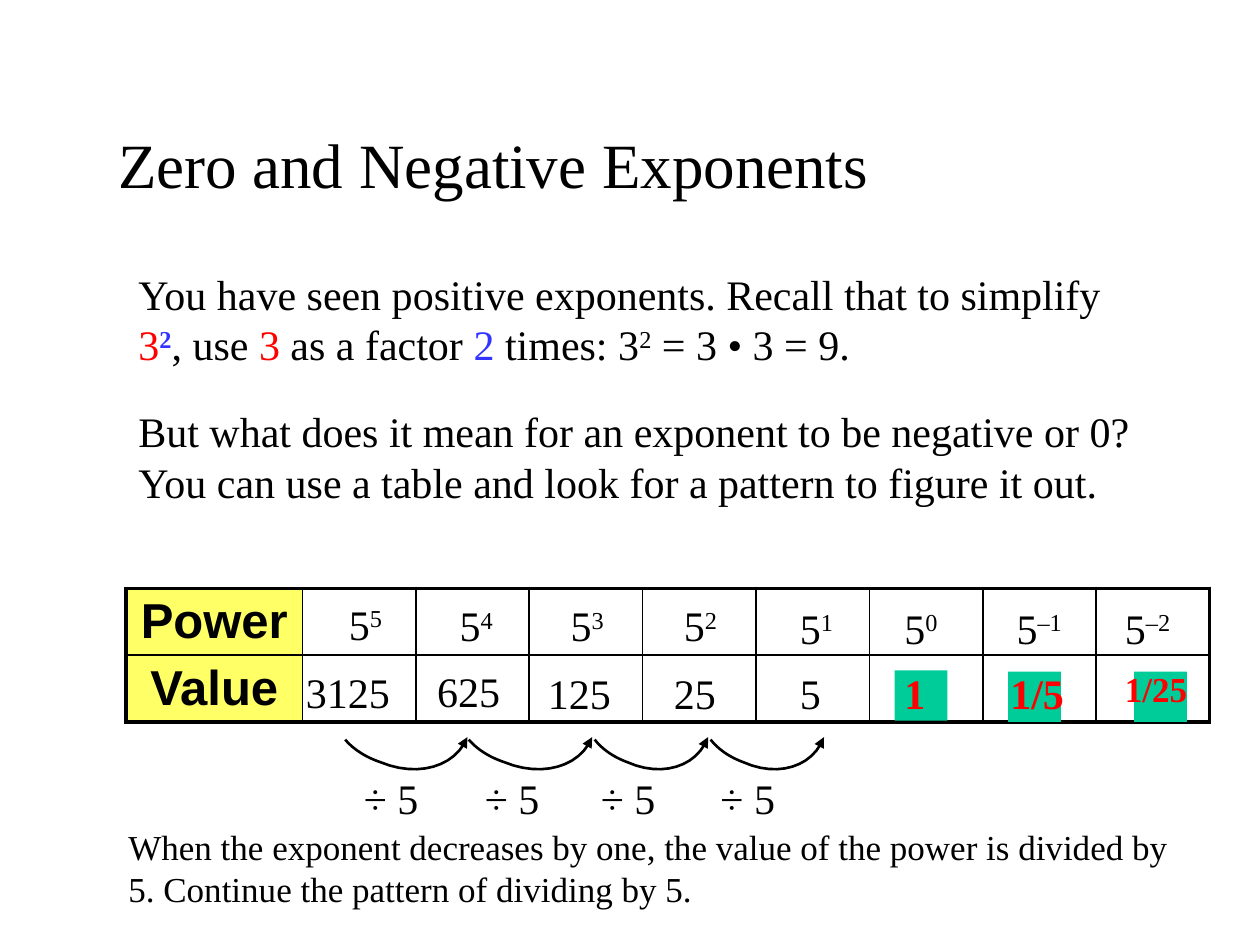
from lxml.etree import SubElement
from pptx import Presentation
from pptx.dml.color import RGBColor
from pptx.enum.shapes import MSO_SHAPE
from pptx.enum.text import MSO_ANCHOR, MSO_AUTO_SIZE, PP_ALIGN
from pptx.oxml.ns import qn
from pptx.util import Inches, Pt

BLACK, RED, BLUE = "000000", "FF0000", "3333FF"
YELLOW, GREEN = "FFFF66", "00CC99"
SERIF = "Times New Roman"


def color(value):
    """Turn a hex string into a colour."""
    return RGBColor.from_string(value)


def add_span(para, text, size=24, hue=BLACK, bold=False, raised=False, face=SERIF):
    """Add one formatted run to a paragraph."""
    span = para.add_run()
    span.text = text
    span.font.name = face
    span.font.size = Pt(size)
    span.font.bold = bold
    span.font.color.rgb = color(hue)
    if raised:
        span._r.get_or_add_rPr().set("baseline", "30000")


def add_text(shapes, left, top, width, height, spans, wrap=True):
    """Add a text box from (text, format) pairs."""
    box = shapes.add_textbox(Inches(left), Inches(top), Inches(width), Inches(height))
    frame = box.text_frame
    frame.word_wrap = wrap
    frame.auto_size = MSO_AUTO_SIZE.SHAPE_TO_FIT_TEXT
    for text, style in spans:
        add_span(frame.paragraphs[0], text, **style)


def add_title(page, text):
    """Move and fill the title placeholder."""
    title = page.shapes.title
    title.left, title.top = Inches(0.75), Inches(0.67)
    title.width, title.height = Inches(6.33), Inches(1.25)
    title.text_frame.vertical_anchor = MSO_ANCHOR.MIDDLE
    para = title.text_frame.paragraphs[0]
    para.alignment = PP_ALIGN.CENTER
    add_span(para, text, size=36)


def set_borders(cell, widths):
    """Give a cell black borders, by side and width in points."""
    properties = cell._tc.get_or_add_tcPr()
    for side, width in widths.items():
        line = SubElement(properties, qn(f"a:ln{side}"), w=str(Pt(width)))
        fill = SubElement(line, qn("a:solidFill"))
        SubElement(fill, qn("a:srgbClr"), val=BLACK)


def add_power_table(page, labels, columns):
    """Add the grid with a yellow label column and a thick outer frame."""
    rows = len(labels)
    frame = page.shapes.add_table(
        rows, columns, Inches(1), Inches(4.67), Inches(8.6), Inches(1.06))
    table = frame.table
    table.first_row = table.horz_banding = False
    for index, column in enumerate(table.columns):
        column.width = Inches(0.9 if index else 1.4)
    for row, label in enumerate(labels):
        table.rows[row].height = Inches(0.53)
        for index in range(columns):
            cell = table.cell(row, index)
            outer = {"L": index == 0, "R": index == columns - 1,
                     "T": row == 0, "B": row == rows - 1}
            set_borders(cell, {side: 2.25 if edge else 1 for side, edge in outer.items()})
            if index:
                cell.fill.background()
                continue
            cell.fill.solid()
            cell.fill.fore_color.rgb = color(YELLOW)
            cell.vertical_anchor = MSO_ANCHOR.MIDDLE
            cell.margin_left = cell.margin_right = Inches(0.05)
            cell.margin_top = cell.margin_bottom = Inches(0.02)
            para = cell.text_frame.paragraphs[0]
            para.alignment = PP_ALIGN.CENTER
            add_span(para, label, size=28, bold=True, face="Arial")


def add_block(page, left, top):
    """Add a green block behind an answer."""
    block = page.shapes.add_shape(
        MSO_SHAPE.RECTANGLE, Inches(left), Inches(top), Inches(0.42), Inches(0.4))
    block.shadow.inherit = False
    block.fill.solid()
    block.fill.fore_color.rgb = color(GREEN)
    block.line.fill.background()


def bezier(points, steps=12):
    """Return the points along a cubic curve, without its start."""
    result = []
    for step in range(1, steps + 1):
        t = step / steps
        weights = ((1 - t) ** 3, 3 * t * (1 - t) ** 2, 3 * t * t * (1 - t), t ** 3)
        result.append(tuple(sum(w * p[axis] for w, p in zip(weights, points))
                            for axis in (0, 1)))
    return result


def add_division_step(page, left, width, label_left):
    """Add a curved arrow with its division label as a group."""
    group = page.shapes.add_group_shape()
    first = [(0, 0), (0.07, 0.08), (0.17, 0.14), (0.29, 0.18)]
    second = [first[-1], (0.59, 0.3), (0.9, 0.22), (1, -0.02)]
    builder = group.shapes.build_freeform(Inches(left), Inches(5.87))
    builder.add_line_segments(
        [(Inches(left + x * width), Inches(5.87 + y))
         for x, y in bezier(first) + bezier(second)], close=False)
    arc = builder.convert_to_shape()
    arc.shadow.inherit = False
    arc.fill.background()
    arc.line.color.rgb = color(BLACK)
    arc.line.width = Pt(1.5)
    SubElement(arc.line._get_or_add_ln(), qn("a:tailEnd"), type="triangle")
    add_text(group.shapes, label_left, 6.08, 0.64, 0.51, [("÷ 5", {})], wrap=False)


def main():
    """Build the slide and save it."""
    deck = Presentation()
    deck.slide_width, deck.slide_height = Inches(10), Inches(7.5)
    page = deck.slides.add_slide(deck.slide_layouts[5])
    shapes = page.shapes
    add_title(page, "Zero and Negative Exponents")
    add_power_table(page, ["Power", "Value"], 9)

    add_text(shapes, 1, 2.08, 8.1, 0.91, [
        ("You have seen positive exponents. Recall that to simplify ", {}),
        ("3", {"hue": RED}),
        ("2", {"hue": BLUE, "bold": True, "raised": True}),
        (", use ", {}),
        ("3", {"hue": RED}),
        (" as a factor ", {}),
        ("2 ", {"hue": BLUE}),
        ("times: 3", {}),
        ("2", {"raised": True}),
        (" = 3 • 3 = 9.", {})])
    add_text(shapes, 1, 3.17, 8.56, 0.91, [
        ("But what does it mean for an exponent to be negative or 0? "
         "You can use a table and look for a pattern to figure it out.", {})])

    powers = [("5", 2.67, 4.7), ("4", 3.55, 4.71), ("3", 4.43, 4.71), ("2", 5.33, 4.71),
              ("1", 6.25, 4.73), ("0", 7.08, 4.73), ("–1", 7.97, 4.73), ("–2", 8.83, 4.73)]
    for exponent, left, top in powers:
        add_text(shapes, left, top, 1, 0.5, [("5", {}), (exponent, {"raised": True})])

    values = [("3125", 2.33, 5.24), ("625", 3.37, 5.23), ("125", 4.25, 5.25),
              ("25", 5.25, 5.25), ("5", 6.25, 5.25)]
    for value, left, top in values:
        add_text(shapes, left, top, 0.89, 0.5, [(value, {})])

    answers = [("1", 7.08, 0.37, 24, 7.1, 5.32), ("1/5", 7.92, 0.63, 24, 8, 5.33),
               ("1/25", 8.83, 0.7, 20, 9, 5.33)]
    for answer, left, width, size, block_left, block_top in answers:
        add_block(page, block_left, block_top)
        add_text(shapes, left, 5.25, width, 0.5,
                 [(answer, {"size": size, "hue": RED, "bold": True})], wrap=False)

    for left, width, label_left in [(2.74, 0.97, 2.79), (3.72, 0.98, 3.75),
                                    (4.72, 0.9, 4.67), (5.64, 0.9, 5.62)]:
        add_division_step(page, left, width, label_left)

    add_text(shapes, 0.92, 6.5, 8.58, 0.77, [
        ("When the exponent decreases by one, the value of the power is divided by 5. "
         "Continue the pattern of dividing by 5.", {"size": 20})])
    deck.save("out.pptx")


if __name__ == "__main__":
    main()
